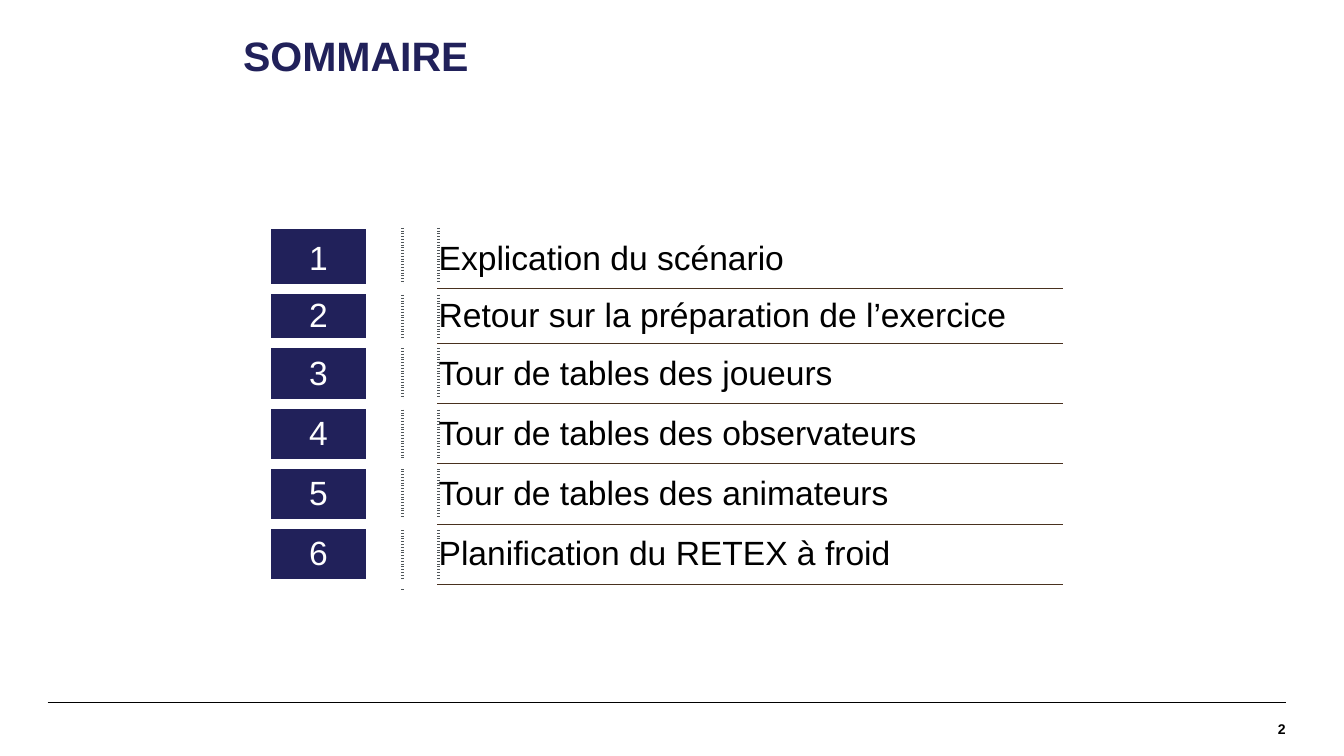
from lxml import etree
from pptx import Presentation
from pptx.dml.color import RGBColor
from pptx.enum.shapes import MSO_CONNECTOR
from pptx.enum.text import MSO_ANCHOR, PP_ALIGN
from pptx.oxml.ns import qn
from pptx.util import Cm, Pt

MIDDLE = MSO_ANCHOR.MIDDLE
LEFT, CENTER, RIGHT = PP_ALIGN.LEFT, PP_ALIGN.CENTER, PP_ALIGN.RIGHT
STRAIGHT = MSO_CONNECTOR.STRAIGHT

FONT = "Arial"
COLORS = {"navy": "21215A", "white": "FFFFFF", "black": "000000",
          "grey": "505659", "brown": "49311F"}

TITLE = "SOMMAIRE"
PAGE_NUMBER = "2"
TOPICS = [
    "Explication du scénario",
    "Retour sur la préparation de l’exercice",
    "Tour de tables des joueurs",
    "Tour de tables des observateurs",
    "Tour de tables des animateurs",
    "Planification du RETEX à froid",
]
COLUMN_WIDTHS = [1.82, 0.68, 0.68, 11.78]
ROW_HEIGHTS = [1.14, 1.03, 1.14, 1.14, 1.14, 1.14]

# Border styles: color, width in points, dash
GAP = ("white", 6, "solid")
DOTS = ("grey", 1.5, "sysDot")
RULE = ("brown", 0.5, "solid")


def rgb(name):
    return RGBColor.from_string(COLORS[name])


def format_paragraph(paragraph, size, color, alignment=LEFT, bold=False):
    paragraph.alignment = alignment
    for run in paragraph.runs:
        run.font.name = FONT
        run.font.size = Pt(size)
        run.font.bold = bold
        run.font.color.rgb = rgb(color)


def set_borders(cell, borders):
    """Draw the given sides (L, R, T, B); the lines must precede the cell fill."""
    properties = cell._tc.get_or_add_tcPr()
    sides = [side for side in "LRTB" if side in borders]
    for index, side in enumerate(sides):
        color, width, dash = borders[side]
        line = etree.Element(qn(f"a:ln{side}"), w=str(Pt(width)))
        fill = etree.SubElement(line, qn("a:solidFill"))
        etree.SubElement(fill, qn("a:srgbClr"), val=COLORS[color])
        etree.SubElement(line, qn("a:prstDash"), val=dash)
        properties.insert(index, line)


def add_title(slide):
    title = slide.shapes.title
    title.left, title.top, title.width, title.height = Cm(4.29), Cm(0.25), Cm(15.88), Cm(1.7)
    title.text_frame.text = TITLE
    title.text_frame.vertical_anchor = MIDDLE
    paragraph = title.text_frame.paragraphs[0]
    paragraph.line_spacing = 0.9
    format_paragraph(paragraph, 22, "navy", bold=True)
    paragraph._p.get_or_add_pPr().set("marL", str(Cm(0.05)))


def add_agenda(slide):
    frame = slide.shapes.add_table(len(TOPICS), len(COLUMN_WIDTHS), Cm(5.11), Cm(4.32),
                                   Cm(sum(COLUMN_WIDTHS)), Cm(sum(ROW_HEIGHTS)))
    table = frame.table
    table.first_row = table.horz_banding = False
    for column, width in zip(table.columns, COLUMN_WIDTHS):
        column.width = Cm(width)
    for row, height in zip(table.rows, ROW_HEIGHTS):
        row.height = Cm(height)

    for index, topic in enumerate(TOPICS):
        cells = [table.cell(index, column) for column in range(len(COLUMN_WIDTHS))]
        number, before_dots, after_dots, label = cells
        for cell in cells:
            cell.vertical_anchor = MIDDLE
            cell.fill.background()
        number.fill.solid()
        number.fill.fore_color.rgb = rgb("navy")
        number.text_frame.text = str(index + 1)
        format_paragraph(number.text_frame.paragraphs[0], 18, "white", CENTER)
        label.margin_left = 0
        label.text_frame.text = topic
        format_paragraph(label.text_frame.paragraphs[0], 18, "black")

        gaps = {"T": GAP, "B": GAP} if index else {"B": GAP}
        set_borders(number, gaps)
        set_borders(before_dots, {**gaps, "R": DOTS})
        set_borders(after_dots, {**gaps, "L": DOTS})
        set_borders(label, {side: RULE for side in gaps})


def add_footer(slide):
    line = slide.shapes.add_connector(STRAIGHT, Cm(0.9), Cm(13.28), Cm(24.3), Cm(13.28))
    line.line.color.rgb = rgb("black")
    line.line.width = Pt(0.8)
    etree.SubElement(line._element.spPr, qn("a:effectLst"))

    box = slide.shapes.add_textbox(Cm(20.55), Cm(13.28), Cm(3.75), Cm(1))
    text_frame = box.text_frame
    text_frame.word_wrap = True
    text_frame.vertical_anchor = MIDDLE
    text_frame.margin_left = text_frame.margin_right = 0
    text_frame.margin_top = text_frame.margin_bottom = 0
    text_frame.text = PAGE_NUMBER
    format_paragraph(text_frame.paragraphs[0], 7.5, "black", RIGHT, bold=True)


def main():
    presentation = Presentation()
    presentation.slide_width, presentation.slide_height = Cm(25.4), Cm(14.29)
    slide = presentation.slides.add_slide(presentation.slide_layouts[5])
    add_title(slide)
    add_agenda(slide)
    add_footer(slide)
    presentation.save("out.pptx")


if __name__ == "__main__":
    main()
